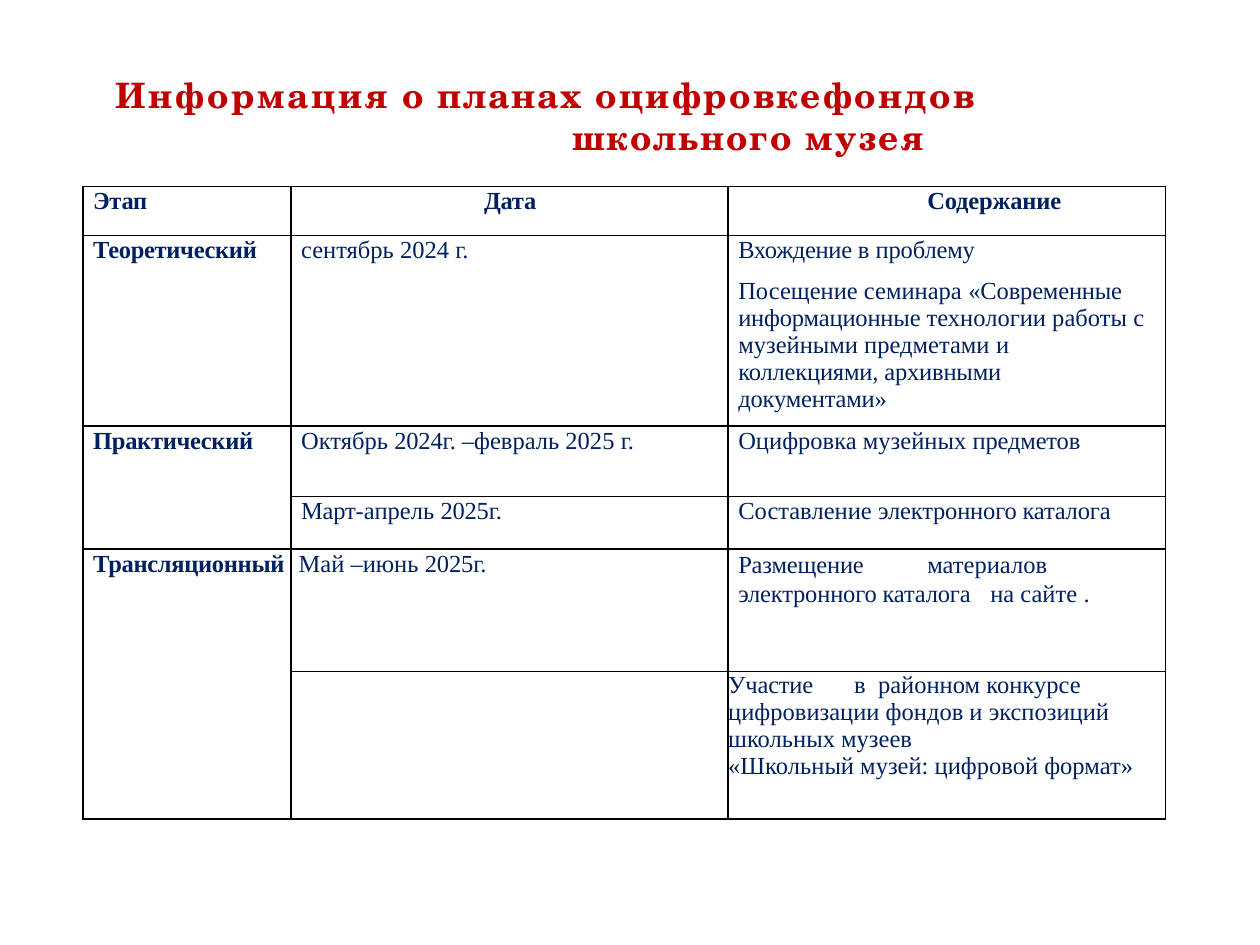
from dataclasses import dataclass

from lxml import etree
from pptx import Presentation
from pptx import util as u
from pptx.dml.color import RGBColor
from pptx.enum import text
from pptx.oxml import ns


@dataclass
class Theme:
    title_font: str = "TeX Gyre Schola"
    body_font: str = "Times New Roman"
    title_size: int = 20
    body_size: int = 14
    title_color: str = "C00000"
    body_color: str = "002060"
    border_color: str = "000000"
    border_width: int = 1


@dataclass
class Line:
    runs: list
    bold: bool = False
    indent: float = 0.08
    leading: float = 16.4
    before: float = 0
    align: text.PP_ALIGN = text.PP_ALIGN.LEFT
    tabs: tuple = ()


class SlideBuilder:
    """Holds the theme and the current slide and adds each kind of element."""

    def __init__(self, presentation, theme):
        self.theme = theme
        self.slide = presentation.slides.add_slide(presentation.slide_layouts[5])

    def add_runs(self, paragraph, runs, font, size, color, bold):
        for wording, spacing in runs:
            run = paragraph.add_run()
            run.text = wording
            run.font.name = font
            run.font.size = u.Pt(size)
            run.font.bold = bold
            run.font.color.rgb = RGBColor.from_string(color)
            run.font._element.set("spc", str(round(spacing * 100)))

    def set_indent(self, paragraph, margin, first=0):
        properties = paragraph._p.get_or_add_pPr()
        properties.set("marL", str(u.Inches(margin)))
        properties.set("indent", str(u.Inches(first)))
        return properties

    def add_title(self, runs, left, top, width, height):
        title = self.slide.shapes.title
        title.left, title.top = u.Inches(left), u.Inches(top)
        title.width, title.height = u.Inches(width), u.Inches(height)
        frame = title.text_frame
        frame.margin_left = frame.margin_right = frame.margin_bottom = 0
        frame.margin_top = u.Inches(0.01)
        frame.word_wrap = True
        frame.auto_size = text.MSO_AUTO_SIZE.SHAPE_TO_FIT_TEXT
        frame.vertical_anchor = text.MSO_ANCHOR.TOP
        paragraph = frame.paragraphs[0]
        paragraph.alignment = text.PP_ALIGN.LEFT
        self.set_indent(paragraph, 3.63, -3.62)
        theme = self.theme
        self.add_runs(paragraph, runs, theme.title_font, theme.title_size,
                      theme.title_color, True)

    def add_line(self, paragraph, line):
        properties = self.set_indent(paragraph, line.indent)
        if line.tabs:
            tab_list = etree.SubElement(properties, ns.qn("a:tabLst"))
            for position in line.tabs:
                etree.SubElement(tab_list, ns.qn("a:tab"),
                                 pos=str(u.Inches(position)), algn="l")
        paragraph.alignment = line.align
        if line.leading:
            paragraph.line_spacing = u.Pt(line.leading)
        if line.before:
            paragraph.space_before = u.Pt(line.before)
        theme = self.theme
        self.add_runs(paragraph, line.runs, theme.body_font, theme.body_size,
                      theme.body_color, line.bold)

    def style_cell(self, cell):
        cell.margin_left = cell.margin_top = cell.margin_bottom = 0
        cell.margin_right = 0
        properties = cell._tc.get_or_add_tcPr()
        for side in ("a:lnL", "a:lnR", "a:lnT", "a:lnB"):
            border = etree.SubElement(properties, ns.qn(side),
                                      w=str(u.Pt(self.theme.border_width)))
            fill = etree.SubElement(border, ns.qn("a:solidFill"))
            etree.SubElement(fill, ns.qn("a:srgbClr"), val=self.theme.border_color)
        cell.fill.background()

    def add_table(self, rows, merges, left, top, widths, heights):
        table = self.slide.shapes.add_table(
            len(rows), len(widths), u.Inches(left), u.Inches(top),
            u.Inches(sum(widths)), u.Inches(sum(heights))).table
        table.first_row = table.horz_banding = False
        for column, width in zip(table.columns, widths):
            column.width = u.Inches(width)
        for row, height, contents in zip(table.rows, heights, rows):
            row.height = u.Inches(height)
            for cell, lines in zip(row.cells, contents):
                self.style_cell(cell)
                frame = cell.text_frame
                for index, line in enumerate(lines):
                    paragraph = frame.add_paragraph() if index else frame.paragraphs[0]
                    self.add_line(paragraph, line)
                if len(lines) == 2:
                    cell.margin_right = u.Inches(0.1)
        for first, last in merges:
            table.cell(first, 0).merge(table.cell(last, 0))


def stage(name):
    return [Line([(name, -0.2)], bold=True)]


TITLE = [("Информация ", 1.5), ("о планах ", 1), ("оцифровке", 1.3),
         ("фондов ", 1.5), ("школьного ", 1.1), ("музея", 1.4)]

ROWS = [
    [stage("Этап"),
     [Line([("Дата", -0.2)], bold=True, indent=0.01, align=text.PP_ALIGN.CENTER)],
     [Line([("Содержание", -0.1)], bold=True, indent=1.58)]],
    [stage("Теоретический"),
     [Line([("сентябрь 2024 ", 0), ("г.", -0.2)])],
     [Line([("Вхождение ", -0.2), ("в ", 0), ("проблему", -0.1)]),
      Line([("Посещение семинара ", 0), ("«Современные информационные ", -0.1),
            ("технологии работы ", 0), ("с ", -0.5), ("музейными предметами ", 0),
            ("и ", -0.5), ("коллекциями, архивными документами»", -0.1)],
           leading=0, before=7.4)]],
    [stage("Практический"),
     [Line([("Октябрь ", 0), ("2024г. ", -0.1), ("–февраль 2025 ", 0), ("г.", -0.2)])],
     [Line([("Оцифровка музейных ", 0), ("предметов", -0.1)])]],
    [[],
     [Line([("Март-", -0.1), ("апрель ", 0), ("2025г.", -0.1)])],
     [Line([("Составление ", 0), ("электронного каталога", -0.1)])]],
    [stage("Трансляционный"),
     [Line([("Май –июнь ", 0), ("2025г.", -0.1)], indent=0.06)],
     [Line([("Размещение", -0.1), ("\t\tматериалов ", 0),
            ("электронного каталога", -0.1), ("\tна сайте ", 0), (".", -0.1)],
           leading=16.8, tabs=(1.12, 1.26))]],
    [[],
     [],
     [Line([("Участие\t", -0.1), ("в  районном конкурсе", 0)], indent=0, leading=0),
      Line([("цифровизации фондов и экспозиций школьных музеев", 0)],
           indent=0, leading=0),
      Line([("«Школьный музей: цифровой формат»", 0)], indent=0, leading=0)]],
]


def main():
    presentation = Presentation()
    presentation.slide_width, presentation.slide_height = u.Inches(10), u.Inches(7.5)
    builder = SlideBuilder(presentation, Theme())
    builder.add_title(TITLE, 0.91, 0.57, 8.17, 0.69)
    builder.add_table(ROWS, [(2, 3), (4, 5)], 0.66, 1.48,
                      [1.65, 3.47, 3.47], [0.39, 1.51, 0.56, 0.42, 0.97, 1.17])
    presentation.save("out.pptx")


if __name__ == "__main__":
    main()
